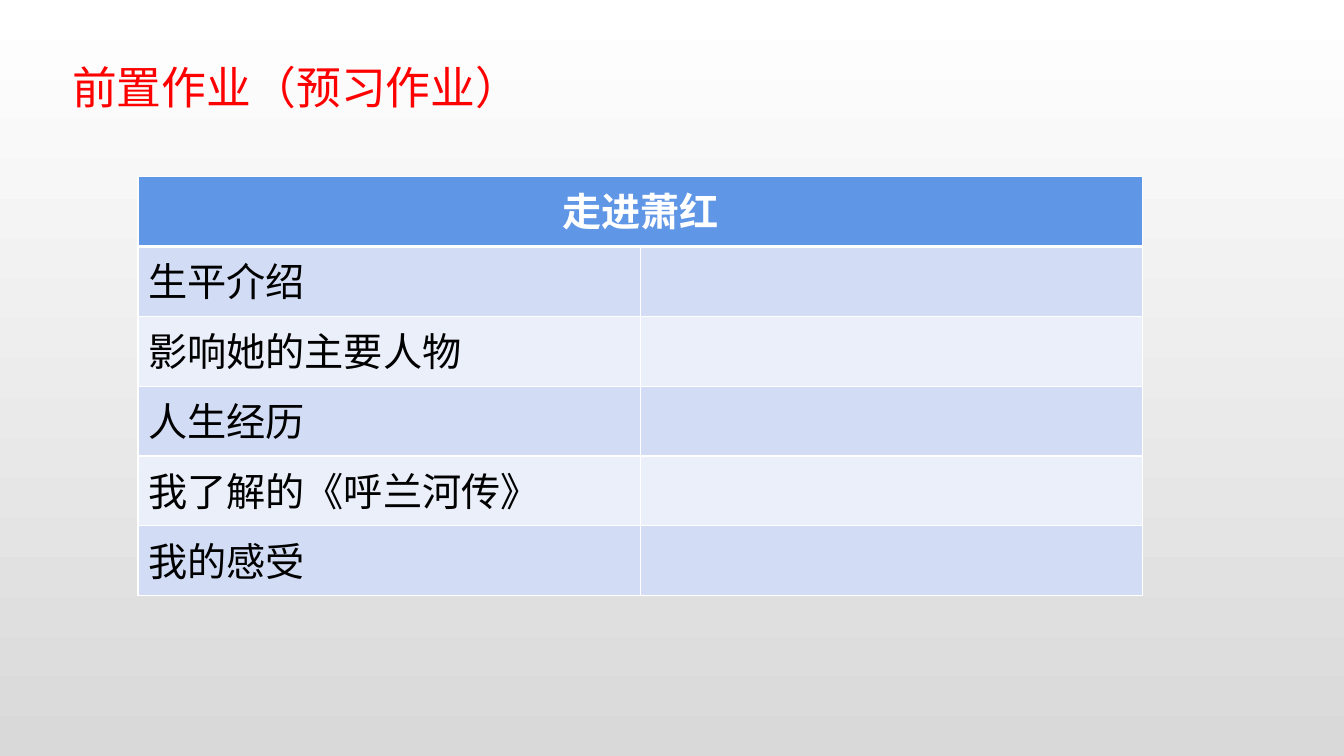
import dataclasses
import typing

import lxml.etree
import pptx
import pptx.dml.color
import pptx.enum.text
import pptx.oxml.ns
import pptx.util

Cm = pptx.util.Cm
Pt = pptx.util.Pt
qn = pptx.oxml.ns.qn
ALIGN = pptx.enum.text.PP_ALIGN

WHITE = "FFFFFF"
BANDS = ("D2DDF5", "EAEFFA")
ROW_HEIGHT = 1.76
COLUMN_WIDTH = 12.66


@dataclasses.dataclass(frozen=True)
class TableRow:
    label: str
    fill: str
    color: str = "000000"
    bold: bool = False
    align: ALIGN = ALIGN.LEFT
    bottom: float = 1


TOPICS = ("生平介绍", "影响她的主要人物", "人生经历", "我了解的《呼兰河传》", "我的感受")
HEADER = TableRow("走进萧红", "6096E6", WHITE, True, ALIGN.CENTER, 3)
ROWS = [HEADER] + [TableRow(topic, BANDS[i % 2]) for i, topic in enumerate(TOPICS)]


def rgb(value: str) -> pptx.dml.color.RGBColor:
    return pptx.dml.color.RGBColor.from_string(value)


def write(tf: typing.Any, text: str, size: float, color: str,
          bold: bool = False, align: ALIGN = ALIGN.LEFT) -> None:
    p = tf.paragraphs[0]
    p.alignment = align
    r = p.add_run()
    r.text = text
    for name, value in {"name": "Arial", "size": Pt(size), "bold": bold}.items():
        setattr(r.font, name, value)
    r.font.color.rgb = rgb(color)


def set_borders(cell: typing.Any, top: float, bottom: float) -> None:
    tcPr = cell._tc.get_or_add_tcPr()
    widths = {"a:lnL": 1, "a:lnR": 1, "a:lnT": top, "a:lnB": bottom}
    for i, (tag, width) in enumerate(widths.items()):
        ln = lxml.etree.Element(qn(tag), w=str(Pt(width)))
        fill = lxml.etree.SubElement(ln, qn("a:solidFill"))
        lxml.etree.SubElement(fill, qn("a:srgbClr"), val=WHITE)
        tcPr.insert(i, ln)


def add_background(s: typing.Any) -> None:
    fill = s.background.fill
    fill.gradient()
    fill.gradient_angle = 270
    for stop, color, position in zip(fill.gradient_stops, (WHITE, "D9D9D9"), (0, 1)):
        stop.color.rgb = rgb(color)
        stop.position = position


def add_title(s: typing.Any) -> None:
    sp = s.shapes.add_textbox(Cm(1.57), Cm(1.37), Cm(13.21), Cm(1.63))
    tf = sp.text_frame
    tf.word_wrap = True
    write(tf, "前置作业（预习作业）", 32, "FF0000")


def add_homework_table(s: typing.Any) -> None:
    table = s.shapes.add_table(len(ROWS), 2, Cm(3.48), Cm(4.45),
                               Cm(2 * COLUMN_WIDTH), Cm(len(ROWS) * ROW_HEIGHT)).table
    for column in table.columns:
        column.width = Cm(COLUMN_WIDTH)
    top = 1
    for row, entry in zip(table.rows, ROWS):
        row.height = Cm(ROW_HEIGHT)
        for cell in row.cells:
            cell.fill.solid()
            cell.fill.fore_color.rgb = rgb(entry.fill)
            set_borders(cell, top, entry.bottom)
        write(row.cells[0].text_frame, entry.label, 28, entry.color, entry.bold, entry.align)
        top = entry.bottom
    table.cell(0, 0).merge(table.cell(0, 1))


def main() -> None:
    prs = pptx.Presentation()
    prs.slide_width, prs.slide_height = Cm(33.87), Cm(19.05)
    s = prs.slides.add_slide(prs.slide_layouts[6])
    add_background(s)
    add_title(s)
    add_homework_table(s)
    prs.save("out.pptx")


if __name__ == "__main__":
    main()
